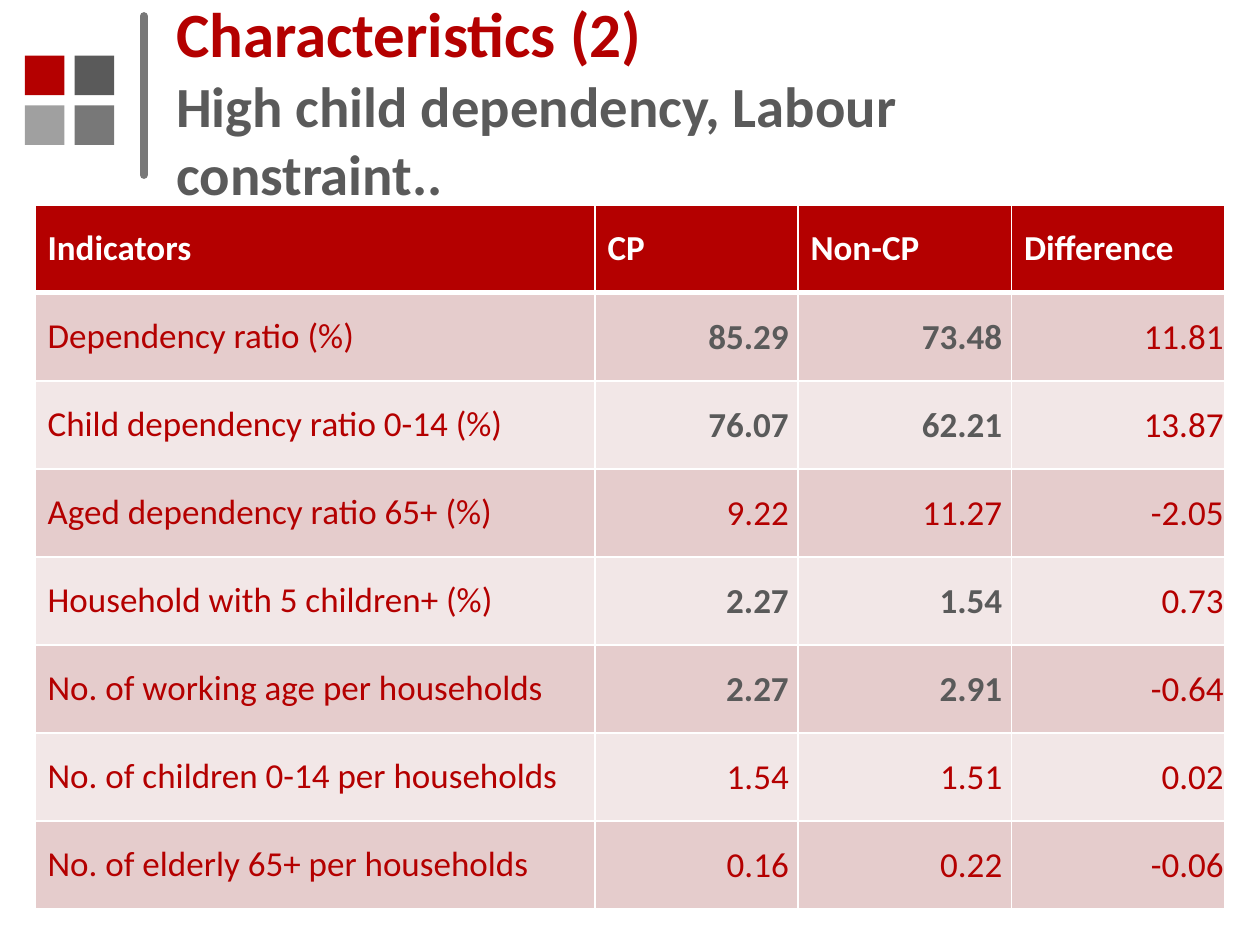
"""Build the slide on dependency ratios of CP and non-CP households."""
from lxml import etree
from pptx import Presentation
from pptx import util as u
from pptx.dml.color import RGBColor
from pptx.enum import shapes, text
from pptx.oxml.ns import qn

Pt = u.Pt
RED, DARK, MID, LIGHT, WHITE = "B40000", "5A5A5A", "787878", "A0A0A0", "FFFFFF"


def paint(fill, hue):
    fill.solid()
    fill.fore_color.rgb = RGBColor.from_string(hue)


def write(para, words, size, hue, bold):
    run = para.add_run()
    run.text = words
    run.font.name = "Calibri"
    run.font.size = Pt(size)
    run.font.bold = bold
    paint(run.font.fill, hue)


deck = Presentation()
deck.slide_width, deck.slide_height = Pt(720), Pt(540)
slide = deck.slides.add_slide(deck.slide_layouts[6])
items = slide.shapes

for col, row, hue in [(0, 0, RED), (1, 0, DARK), (1, 1, MID), (0, 1, LIGHT)]:
    tile = items.add_shape(shapes.MSO_SHAPE.RECTANGLE, Pt(14.2 + 28.4 * col),
                           Pt(31.8 + 28.4 * row), Pt(22.6), Pt(22.6))
    tile.shadow.inherit = False
    paint(tile.fill, hue)
    tile.line.fill.background()

bar = items.add_connector(shapes.MSO_CONNECTOR.STRAIGHT,
                          Pt(82.2), Pt(9.2), Pt(82.2), Pt(100))
bar.line.width = Pt(4.5)
paint(bar.line.fill, MID)
bar.line._get_or_add_ln().set("cap", "rnd")
etree.SubElement(bar._element.spPr, qn("a:effectLst"))

title = items.add_textbox(Pt(93.6), Pt(20.8), Pt(573), Pt(73.4)).text_frame
title.word_wrap = True
title.vertical_anchor = text.MSO_ANCHOR.MIDDLE
head = title.paragraphs[0]
write(head, "Characteristics (2)", 36, RED, True)
head.add_line_break()
write(head, "High child dependency, Labour constraint..", 32.4, DARK, True)

data = [
    ("Indicators", "CP", "Non-CP", "Difference"),
    ("Dependency ratio (%)", "85.29 ", "73.48 ", "11.81"),
    ("Child dependency ratio 0-14 (%)", "76.07 ", "62.21 ", "13.87"),
    ("Aged dependency ratio 65+ (%)", "9.22 ", "11.27 ", "-2.05"),
    ("Household with 5 children+ (%)", "2.27 ", "1.54 ", "0.73"),
    ("No. of working age per households", "2.27 ", "2.91 ", "-0.64"),
    ("No. of children 0-14 per households", "1.54 ", "1.51 ", "0.02"),
    ("No. of elderly 65+ per households", "0.16 ", "0.22 ", "-0.06"),
]
strong = {1, 2, 4, 5}
widths = [320, 116, 122, 122]
grid = items.add_table(len(data), len(widths), Pt(20), Pt(117),
                       Pt(sum(widths)), Pt(50.3 * len(data))).table
for col, width in zip(grid.columns, widths):
    col.width = Pt(width)
for r, line in enumerate(data):
    grid.rows[r].height = Pt(50.3)
    for c, words in enumerate(line):
        cell = grid.cell(r, c)
        cell.vertical_anchor = text.MSO_ANCHOR.MIDDLE
        para = cell.text_frame.paragraphs[0]
        if r and c:
            cell.margin_left = cell.margin_right = cell.margin_top = Pt(0.7)
            cell.margin_bottom = Pt(0)
            para.alignment = text.PP_ALIGN.RIGHT
        bold = r == 0 or (r in strong and c in (1, 2))
        hue = WHITE if r == 0 else DARK if bold else RED
        write(para, words, 20, hue, bold)
        props = cell._tc.get_or_add_tcPr()
        for side in "LRTB":
            thick = (r, side) in [(0, "B"), (1, "T")]
            edge = etree.SubElement(props, qn("a:ln" + side),
                                    w=str(Pt(3 if thick else 1)))
            ink = etree.SubElement(edge, qn("a:solidFill"))
            etree.SubElement(ink, qn("a:srgbClr"), val=WHITE)
        paint(cell.fill, RED if r == 0 else "E5CCCC" if r % 2 else "F2E7E7")

deck.save("out.pptx")
